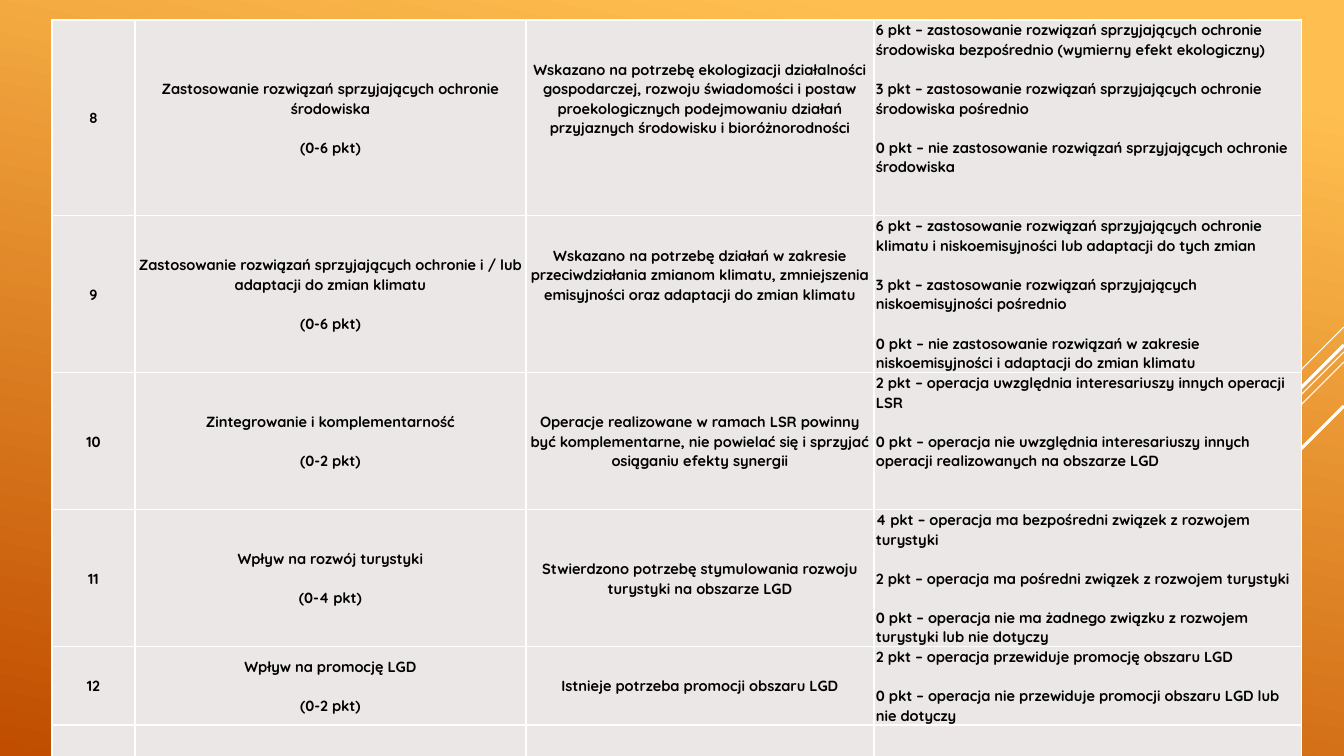
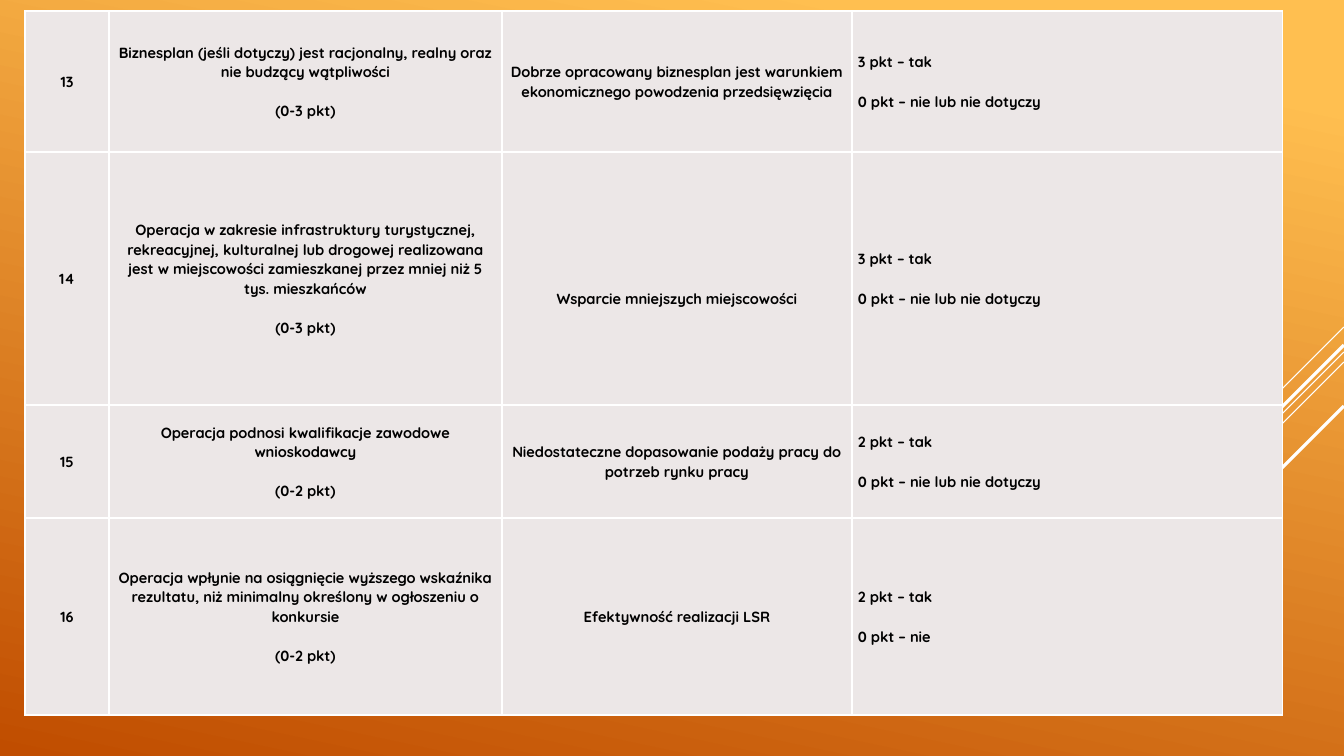
from lxml import etree
from pptx import Presentation
from pptx.dml.color import RGBColor
from pptx.enum.shapes import MSO_CONNECTOR
from pptx.enum.text import MSO_ANCHOR, PP_ALIGN
from pptx.oxml.ns import qn
from pptx.util import Pt

STRAIGHT = MSO_CONNECTOR.STRAIGHT
MIDDLE = MSO_ANCHOR.MIDDLE
LEFT, CENTER = PP_ALIGN.LEFT, PP_ALIGN.CENTER

SLIDE_WIDTH, SLIDE_HEIGHT = 1344, 756
SCALE = 12192000 / SLIDE_WIDTH
COLORS = {
    "light": "FFBF50",
    "dark": "C04D00",
    "line": "FFFFFF",
    "cell": "ECE7E7",
    "text": "000000",
}
FONT = "Quicksand"
GRADIENT_ANGLE = 258
PARAGRAPH_GAP = Pt(14)
EXTRA_LINE = 39
DIAGONALS = [
    (327, 101, 0.75),
    (352, 329, 0.75),
    (362, 209, 0.75),
    (345, 193, 2.25),
    (406, 140, 2.25),
]
YES_NO = "0 pkt – nie lub nie dotyczy"

CRITERIA_8_TO_12 = {
    "box": (52, 20),
    "columns": [83, 391, 348, 428],
    "rows": [195, 157, 137, 137, 78, 32],
    "inset": 2,
    "space_above": [],
    "space_below": [(0, 2), (0, 3), (1, 2), (2, 3)],
    "cells": [
        (
            ["8"],
            ["Zastosowanie rozwiązań sprzyjających ochronie środowiska", "(0-6 pkt)"],
            ["Wskazano na potrzebę ekologizacji działalności gospodarczej, rozwoju "
             "świadomości i postaw proekologicznych podejmowaniu działań przyjaznych "
             "środowisku i bioróżnorodności"],
            ["6 pkt – zastosowanie rozwiązań sprzyjających ochronie środowiska "
             "bezpośrednio (wymierny efekt ekologiczny)",
             "3 pkt – zastosowanie rozwiązań sprzyjających ochronie środowiska pośrednio",
             "0 pkt – nie zastosowanie rozwiązań sprzyjających ochronie środowiska"],
        ),
        (
            ["9"],
            ["Zastosowanie rozwiązań sprzyjających ochronie i / lub adaptacji do zmian "
             "klimatu", "(0-6 pkt)"],
            ["Wskazano na potrzebę działań w zakresie przeciwdziałania zmianom klimatu, "
             "zmniejszenia emisyjności oraz adaptacji do zmian klimatu"],
            ["6 pkt – zastosowanie rozwiązań sprzyjających ochronie klimatu i "
             "niskoemisyjności lub adaptacji do tych zmian",
             "3 pkt – zastosowanie rozwiązań sprzyjających niskoemisyjności pośrednio",
             "0 pkt – nie zastosowanie rozwiązań w zakresie niskoemisyjności i adaptacji "
             "do zmian klimatu"],
        ),
        (
            ["10"],
            ["Zintegrowanie i komplementarność", "(0-2 pkt)"],
            ["Operacje realizowane w ramach LSR powinny być komplementarne, nie powielać "
             "się i sprzyjać osiąganiu efekty synergii"],
            ["2 pkt – operacja uwzględnia interesariuszy innych operacji LSR",
             "0 pkt – operacja nie uwzględnia interesariuszy innych operacji "
             "realizowanych na obszarze LGD"],
        ),
        (
            ["11"],
            ["Wpływ na rozwój turystyki", "(0-4 pkt)"],
            ["Stwierdzono potrzebę stymulowania rozwoju turystyki na obszarze LGD"],
            ["4 pkt – operacja ma bezpośredni związek z rozwojem turystyki",
             "2 pkt – operacja ma pośredni związek z rozwojem turystyki",
             "0 pkt – operacja nie ma żadnego związku z rozwojem turystyki lub nie dotyczy"],
        ),
        (
            ["12"],
            ["Wpływ na promocję LGD", "(0-2 pkt)"],
            ["Istnieje potrzeba promocji obszaru LGD"],
            ["2 pkt – operacja przewiduje promocję obszaru LGD",
             "0 pkt – operacja nie przewiduje promocji obszaru LGD lub nie dotyczy"],
        ),
        ([], [], [], []),
    ],
}

CRITERIA_13_TO_16 = {
    "box": (25, 11),
    "columns": [84, 393, 350, 431],
    "rows": [141, 253, 113, 197],
    "inset": 6,
    "space_above": [(1, 2)],
    "space_below": [],
    "cells": [
        (
            ["13"],
            ["Biznesplan (jeśli dotyczy) jest racjonalny, realny oraz nie budzący "
             "wątpliwości", "(0-3 pkt)"],
            ["Dobrze opracowany biznesplan jest warunkiem ekonomicznego powodzenia "
             "przedsięwzięcia"],
            ["3 pkt – tak", YES_NO],
        ),
        (
            ["14"],
            ["Operacja w zakresie infrastruktury turystycznej, rekreacyjnej, kulturalnej "
             "lub drogowej realizowana jest w miejscowości zamieszkanej przez mniej niż 5 "
             "tys. mieszkańców", "(0-3 pkt)"],
            ["Wsparcie mniejszych miejscowości"],
            ["3 pkt – tak", YES_NO],
        ),
        (
            ["15"],
            ["Operacja podnosi kwalifikacje zawodowe wnioskodawcy", "(0-2 pkt)"],
            ["Niedostateczne dopasowanie podaży pracy do potrzeb rynku pracy"],
            ["2 pkt – tak", YES_NO],
        ),
        (
            ["16"],
            ["Operacja wpłynie na osiągnięcie wyższego wskaźnika rezultatu, niż minimalny "
             "określony w ogłoszeniu o konkursie", "(0-2 pkt)"],
            ["Efektywność realizacji LSR"],
            ["2 pkt – tak", "0 pkt – nie"],
        ),
    ],
}


def px(length):
    """Turn pixels into EMU."""
    return round(length * SCALE)


def color(name):
    """Return a named colour."""
    return RGBColor.from_string(COLORS[name])


def add_background(slide):
    """Fill the slide with the gradient and draw the diagonal lines."""
    fill = slide.background.fill
    fill.gradient()
    fill.gradient_angle = GRADIENT_ANGLE
    for stop, name, position in zip(fill.gradient_stops, ("light", "dark"), (0.1, 1)):
        stop.color.rgb = color(name)
        stop.position = position
    for top, length, width in DIAGONALS:
        connector = slide.shapes.add_connector(
            STRAIGHT, px(SLIDE_WIDTH), px(top), px(SLIDE_WIDTH - length), px(top + length)
        )
        connector.line.color.rgb = color("line")
        connector.line.width = Pt(width)
        etree.SubElement(connector.element.spPr, qn("a:effectLst"))


def add_borders(cell):
    """Draw a thin line on each side of a cell."""
    properties = cell._tc.get_or_add_tcPr()
    for side in ("a:lnL", "a:lnR", "a:lnT", "a:lnB"):
        line = etree.SubElement(properties, qn(side), w=str(Pt(1)))
        fill = etree.SubElement(line, qn("a:solidFill"))
        etree.SubElement(fill, qn("a:srgbClr"), val=COLORS["line"])


def fill_cell(cell, texts, alignment, inset, above, below):
    """Write the paragraphs of a cell and style it."""
    add_borders(cell)
    cell.fill.solid()
    cell.fill.fore_color.rgb = color("cell")
    cell.vertical_anchor = MIDDLE
    cell.margin_left = cell.margin_right = px(inset)
    cell.margin_top, cell.margin_bottom = px(above), px(below)
    cell.text_frame.text = "\n".join(texts)
    for paragraph in cell.text_frame.paragraphs:
        paragraph.alignment = alignment
        paragraph.line_spacing = 1.07
        paragraph.space_before = PARAGRAPH_GAP
        paragraph.font.name = FONT
        paragraph.font.size = Pt(10.5)
        paragraph.font.bold = True
        paragraph.font.color.rgb = color("text")


def add_criteria_table(slide, criteria):
    """Place a table of criteria at its box."""
    left, top = criteria["box"]
    columns, rows = criteria["columns"], criteria["rows"]
    table = slide.shapes.add_table(
        len(rows), len(columns), px(left), px(top), px(sum(columns)), px(sum(rows))
    ).table
    table.first_row = table.horz_banding = False
    for column, width in zip(table.columns, columns):
        column.width = px(width)
    for row, height in zip(table.rows, rows):
        row.height = px(height)
    for row_index, row_texts in enumerate(criteria["cells"]):
        for column_index, texts in enumerate(row_texts):
            place = (row_index, column_index)
            fill_cell(
                table.cell(*place),
                texts,
                LEFT if column_index == 3 else CENTER,
                criteria["inset"],
                EXTRA_LINE if place in criteria["space_above"] else 0,
                EXTRA_LINE if place in criteria["space_below"] else 0,
            )


def main():
    """Build and save the presentation."""
    presentation = Presentation()
    presentation.slide_width = px(SLIDE_WIDTH)
    presentation.slide_height = px(SLIDE_HEIGHT)
    for criteria in (CRITERIA_8_TO_12, CRITERIA_13_TO_16):
        slide = presentation.slides.add_slide(presentation.slide_layouts[6])
        add_background(slide)
        add_criteria_table(slide, criteria)
    presentation.save("out.pptx")


if __name__ == "__main__":
    main()
